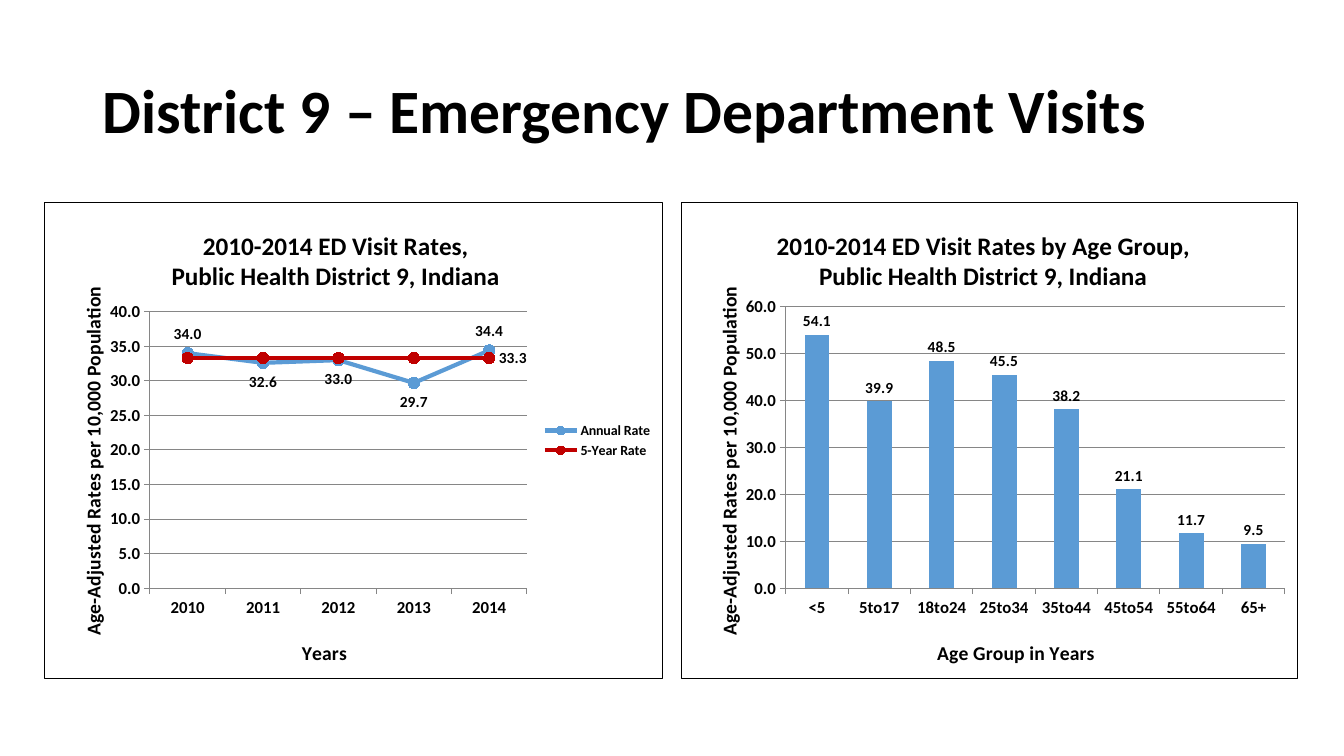
from dataclasses import dataclass, field

from lxml import etree
from pptx import Presentation
from pptx import util as u
from pptx.chart.data import CategoryChartData
from pptx.dml.color import RGBColor
from pptx.enum import chart as ch, text
from pptx.oxml import parse_xml
from pptx.oxml.ns import nsdecls, qn

PX = 9144  # EMU per px, 100 px to the inch
FONT = "Calibri"
BLACK, GRAY, BLUE, RED = "000000", "868686", "5B9BD5", "C00000"
ABOVE, BELOW, RIGHT, OUTSIDE = (
    ch.XL_LABEL_POSITION.ABOVE, ch.XL_LABEL_POSITION.BELOW,
    ch.XL_LABEL_POSITION.RIGHT, ch.XL_LABEL_POSITION.OUTSIDE_END)


@dataclass
class Series:
    name: str
    values: list[float]
    color: str
    label_all: ch.XL_LABEL_POSITION | None = None
    label_points: dict[int, ch.XL_LABEL_POSITION] = field(default_factory=dict)


@dataclass
class RateChart:
    """Layout boxes are fractions of the chart area."""
    kind: ch.XL_CHART_TYPE
    box: tuple[int, int, int, int]
    title: str
    title_at: tuple[float, float]
    category_title: str
    categories: list[str]
    series: list[Series]
    plot_box: tuple[float, float, float, float]
    value_max: int
    value_step: int
    legend: bool = False


CHARTS = [
    RateChart(
        ch.XL_CHART_TYPE.LINE_MARKERS, (44, 200, 614, 474),
        "2010-2014 ED Visit Rates,\nPublic Health District 9, Indiana", (0.2, 0.05),
        "Years", ["2010", "2011", "2012", "2013", "2014"],
        [Series("Annual Rate", [34.0, 32.6, 33.0, 29.7, 34.4], BLUE, BELOW,
                {0: ABOVE, 4: ABOVE}),
         Series("5-Year Rate", [33.3] * 5, RED, None, {4: RIGHT})],
        (0.17, 0.23, 0.61, 0.58), 40, 5, legend=True),
    RateChart(
        ch.XL_CHART_TYPE.COLUMN_CLUSTERED, (675, 200, 612, 474),
        "2010-2014 ED Visit Rates by Age Group,\nPublic Health District 9, Indiana",
        (0.15, 0.05), "Age Group in Years",
        ["<5", "5to17", "18to24", "25to34", "35to44", "45to54", "55to64", "65+"],
        [Series("Series 1", [54.1, 39.9, 48.5, 45.5, 38.2, 21.1, 11.7, 9.5],
                BLUE, OUTSIDE)],
        (0.17, 0.22, 0.81, 0.59), 60, 10),
]


def rgb(color: str) -> RGBColor:
    return RGBColor.from_string(color)


def style_font(font, size: int, bold: bool = True) -> None:
    font.name, font.size, font.bold = FONT, u.Pt(size), bold
    font.color.rgb = rgb(BLACK)


def set_layout(element, *fractions: float, inner: bool = False) -> None:
    """Place a chart part by x, y and, if given, width and height."""
    for old in element.findall(qn("c:layout")):
        element.remove(old)
    layout = etree.Element(qn("c:layout"))
    manual = etree.SubElement(layout, qn("c:manualLayout"))
    values = [("layoutTarget", "inner")] if inner else []
    values += [("xMode", "edge"), ("yMode", "edge")]
    values += zip("xywh", map(str, fractions))
    for tag, value in values:
        etree.SubElement(manual, qn(f"c:{tag}"), val=value)
    element.insert(0 if element.find(qn("c:tx")) is None else 1, layout)


def add_title(title, words: str, size: int, at: tuple[float, float]) -> None:
    tf = title.text_frame
    tf.text = words
    for p in tf.paragraphs:
        p.alignment = text.PP_ALIGN.CENTER
        style_font(p.font, size)
    set_layout(title.element, *at)


def style_axes(chart, c: RateChart) -> None:
    value, category = chart.value_axis, chart.category_axis
    for axis, words, at in (
            (value, "Age-Adjusted Rates per 10,000 Population", (0.05, 0.17)),
            (category, c.category_title, (0.41, 0.91))):
        axis.major_tick_mark = ch.XL_TICK_MARK.OUTSIDE
        axis.minor_tick_mark = ch.XL_TICK_MARK.NONE
        axis.format.line.color.rgb = rgb(GRAY)
        style_font(axis.tick_labels.font, 12)
        add_title(axis.axis_title, words, 14, at)
    category.has_major_gridlines = False
    value.has_major_gridlines = True
    value.major_gridlines.format.line.color.rgb = rgb(GRAY)
    value.minimum_scale, value.maximum_scale = 0, c.value_max
    value.major_unit = c.value_step
    value.tick_labels.number_format = "0.0"
    value.tick_labels.number_format_is_linked = False


def style_series(series, s: Series, is_line: bool) -> None:
    if is_line:
        series.smooth = False
        series.format.line.color.rgb = rgb(s.color)
        series.format.line.width = u.Pt(3)
        series.marker.style = ch.XL_MARKER_STYLE.CIRCLE
        series.marker.size = 8
        marker = series.marker.format
        marker.fill.solid()
        marker.fill.fore_color.rgb = rgb(s.color)
        marker.line.color.rgb = rgb(s.color)
    else:
        series.format.fill.solid()
        series.format.fill.fore_color.rgb = rgb(s.color)
    labels = series.data_labels
    style_font(labels.font, 11)
    labels.number_format, labels.number_format_is_linked = "0.0", False
    labels.show_value = s.label_all is not None
    if s.label_all is not None:
        labels.position = s.label_all
    for i, position in s.label_points.items():
        label = series.points[i].data_label
        style_font(label.font, 11)
        label.position = position


def add_border(chart) -> None:
    border = parse_xml(
        f'<c:spPr {nsdecls("c", "a")}><a:solidFill><a:srgbClr val="FFFFFF"/></a:solidFill>'
        f'<a:ln w="9525"><a:solidFill><a:srgbClr val="{BLACK}"/></a:solidFill></a:ln></c:spPr>')
    chart.element.find(qn("c:chart")).addnext(border)


def add_rate_chart(slide, c: RateChart) -> None:
    data = CategoryChartData(number_format="0.0")
    data.categories = c.categories
    for s in c.series:
        data.add_series(s.name, s.values)
    chart = slide.shapes.add_chart(c.kind, *(n * PX for n in c.box), data).chart
    style_font(chart.font, 10, bold=False)
    chart.has_title = True
    add_title(chart.chart_title, c.title, 18, c.title_at)
    chart.has_legend = c.legend
    if c.legend:
        chart.legend.position = ch.XL_LEGEND_POSITION.RIGHT
        chart.legend.include_in_layout = False
        style_font(chart.legend.font, 10)
    style_axes(chart, c)
    plot = chart.plots[0]
    plot.vary_by_categories = False
    is_line = c.kind == ch.XL_CHART_TYPE.LINE_MARKERS
    if not is_line:
        plot.gap_width = 150
    for series, s in zip(plot.series, c.series):
        style_series(series, s, is_line)
    set_layout(chart.element.find(".//" + qn("c:plotArea")), *c.plot_box, inner=True)
    add_border(chart)


def add_slide_title(slide, words: str) -> None:
    sp = slide.shapes.title
    sp.left, sp.top, sp.width, sp.height = (n * PX for n in (92, 40, 1150, 145))
    tf = sp.text_frame
    tf.text = words
    tf.vertical_anchor = text.MSO_ANCHOR.MIDDLE
    p = tf.paragraphs[0]
    p.alignment, p.line_spacing = text.PP_ALIGN.LEFT, 0.9
    style_font(p.font, 44)


def main() -> None:
    prs = Presentation()
    prs.slide_width, prs.slide_height = 1333 * PX, 750 * PX
    slide = prs.slides.add_slide(prs.slide_layouts[5])
    add_slide_title(slide, "District 9 – Emergency Department Visits")
    for c in CHARTS:
        add_rate_chart(slide, c)
    prs.save("out.pptx")


if __name__ == "__main__":
    main()
